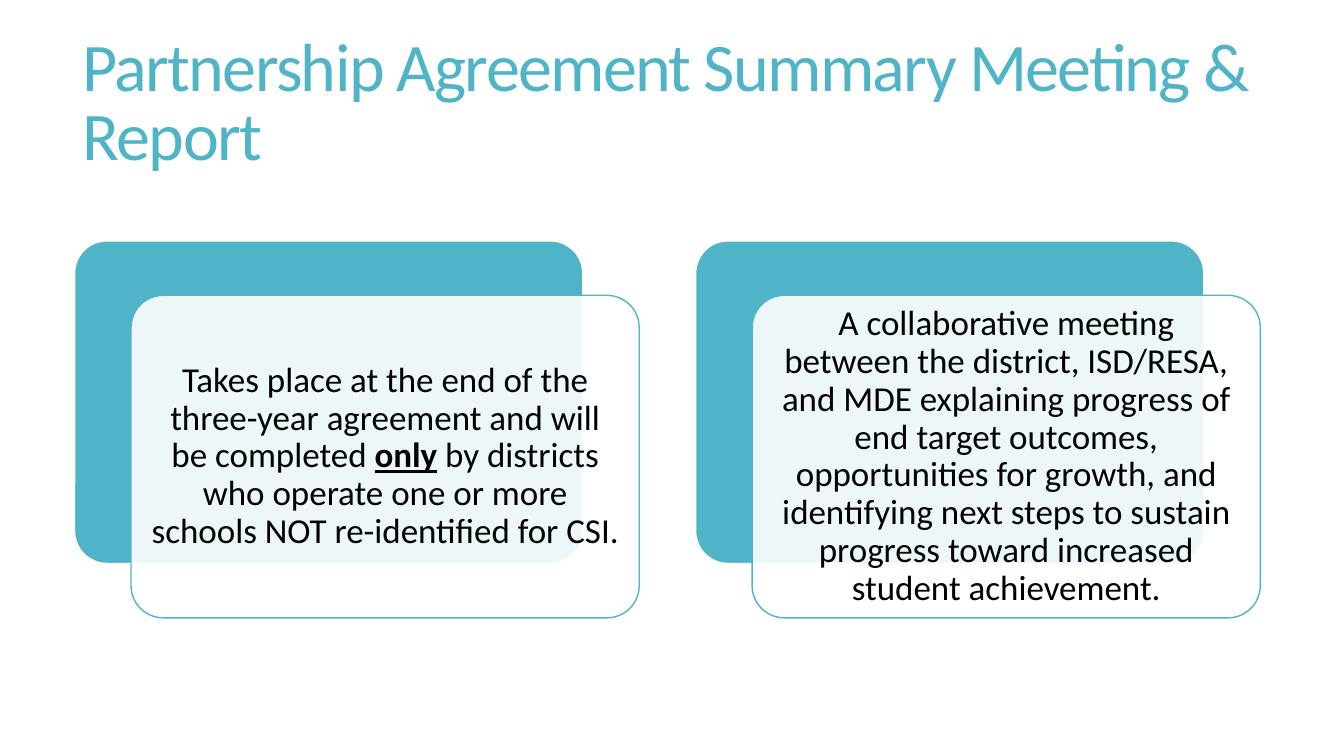
from pptx import Presentation
from pptx.dml.color import RGBColor
from pptx.enum.shapes import MSO_SHAPE as Kind
from pptx.enum.text import MSO_ANCHOR as Anchor, PP_ALIGN as Align
from pptx.oxml.ns import qn
from pptx.util import Inches, Pt
from lxml.etree import SubElement as Sub

TEAL, WHITE, BLACK = "50B4C8", "FFFFFF", "000000"
CARDS = [
    (0.1, [
        ("Takes place at the end of the three-year agreement and will be completed ", False),
        ("only", True),
        (" by districts who operate one or more schools NOT re-identified for CSI.", False)]),
    (0.12, [
        ("A collaborative meeting between the district, ISD/RESA, and MDE explaining "
         "progress of end target outcomes, opportunities for growth, and identifying "
         "next steps to sustain progress toward increased student achievement.", False)]),
]


def color(code):
    return RGBColor.from_string(code)


def add_run(para, text, size, code, strong=False):
    run = para.add_run()
    run.text = text
    font = run.font
    font.name, font.size = "Calibri", Pt(size)
    font.color.rgb = color(code)
    font.bold = font.underline = strong
    return run


def add_title(slide, text):
    title = slide.shapes.title
    title.left, title.top = Inches(0.72), Inches(0.55)
    title.width, title.height = Inches(11.78), Inches(1.81)
    frame = title.text_frame
    frame.vertical_anchor = Anchor.MIDDLE
    frame.word_wrap = True
    frame.margin_bottom = Inches(0.87)
    para = frame.paragraphs[0]
    para.alignment = Align.LEFT
    para.line_spacing = 0.85
    run = add_run(para, text, 48.6, TEAL)
    run.font._element.set("spc", "-120")


def add_panel(slide, left, top, fill, line):
    panel = slide.shapes.add_shape(
        Kind.ROUNDED_RECTANGLE, Inches(left), Inches(top), Inches(5.04), Inches(3.2))
    panel.adjustments[0] = 0.1
    panel.shadow.inherit = False
    panel.fill.solid()
    panel.fill.fore_color.rgb = color(fill)
    panel.line.color.rgb = color(line)
    panel.line.width = Pt(1)
    return panel


def add_card(slide, left, top, pad, parts):
    add_panel(slide, left, top, TEAL, WHITE)
    front = add_panel(slide, left + 0.56, top + 0.54, WHITE, TEAL)
    tint = front.fill._xPr.find(qn("a:solidFill"))[0]
    Sub(tint, qn("a:alpha"), val="90000")
    frame = front.text_frame
    frame.word_wrap = True
    frame.vertical_anchor = Anchor.MIDDLE
    frame.margin_left = frame.margin_right = Inches(pad)
    frame.margin_top = frame.margin_bottom = Inches(0.1)
    para = frame.paragraphs[0]
    para.alignment = Align.CENTER
    para.line_spacing = 0.9
    for text, strong in parts:
        add_run(para, text, 25, BLACK, strong)


def main():
    deck = Presentation()
    deck.slide_width, deck.slide_height = Inches(13.33), Inches(7.5)
    slide = deck.slides.add_slide(deck.slide_layouts[5])
    add_title(slide, "Partnership Agreement Summary Meeting & Report")
    for col, (pad, parts) in enumerate(CARDS):
        add_card(slide, 0.74 + col * 6.16, 2.39, pad, parts)
    deck.save("out.pptx")


if __name__ == "__main__":
    main()
